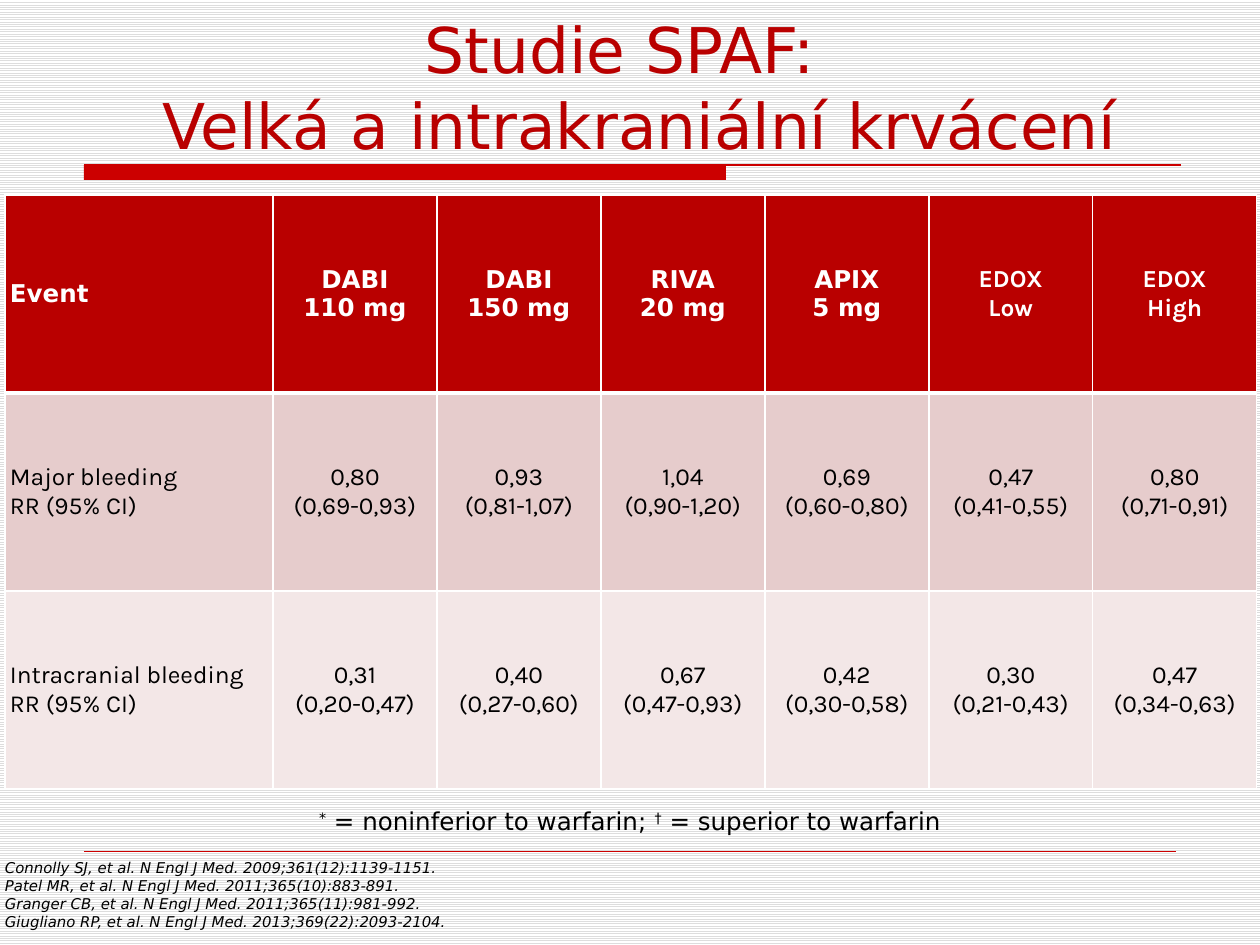
from lxml import etree
from pptx import Presentation
from pptx.dml.color import RGBColor
from pptx.enum.dml import MSO_PATTERN
from pptx.enum.shapes import MSO_CONNECTOR, MSO_SHAPE
from pptx.enum.text import MSO_ANCHOR, MSO_AUTO_SIZE, PP_ALIGN
from pptx.oxml.ns import qn
from pptx.util import Emu, Pt

LEFT, CENTER = PP_ALIGN.LEFT, PP_ALIGN.CENTER
TOP, MIDDLE, BOTTOM = MSO_ANCHOR.TOP, MSO_ANCHOR.MIDDLE, MSO_ANCHOR.BOTTOM
STRAIGHT = MSO_CONNECTOR.STRAIGHT

PX = 914400 // 126
RED, ACCENT, WHITE, BLACK = "B90000", "CC0000", "FFFFFF", "000000"
SANS, KARLA = "DejaVu Sans", "Karla"

TITLE = "Studie SPAF: \v Velká a intrakraniální krvácení"
ROWS = [
    ["Event", "DABI\n110 mg", "DABI\n150 mg", "RIVA\n20 mg", "APIX\n5 mg",
     "EDOX\nLow", "EDOX\nHigh"],
    ["Major bleeding\nRR (95% CI)", "0,80\n(0,69-0,93)", "0,93\n(0,81-1,07)",
     "1,04\n(0,90-1,20)", "0,69\n(0,60-0,80)", "0,47\n(0,41-0,55)",
     "0,80\n(0,71-0,91)"],
    ["Intracranial bleeding\nRR (95% CI)", "0,31\n(0,20-0,47)",
     "0,40\n(0,27-0,60)", "0,67\n(0,47-0,93)", "0,42\n(0,30-0,58)",
     "0,30\n(0,21-0,43)", "0,47\n(0,34-0,63)"],
]
ROW_FILLS = [RED, "E6CCCC", "F3E7E7"]
FIRST_KARLA_HEADING = 5
FOOTNOTE = [("*", True), (" = noninferior to warfarin; ", False),
            ("†", True), (" = superior to warfarin", False)]
CITATIONS = [
    "Connolly SJ, et al. N Engl J Med. 2009;361(12):1139-1151.",
    "Patel MR, et al. N Engl J Med. 2011;365(10):883-891.",
    "Granger CB, et al. N Engl J Med. 2011;365(11):981-992.",
    "Giugliano RP, et al. N Engl J Med. 2013;369(22):2093-2104.",
]


def px(*lengths):
    return [Emu(length * PX) for length in lengths]


def color(value):
    return RGBColor.from_string(value)


def style(font, text_color, **values):
    font.color.rgb = color(text_color)
    for name, value in values.items():
        setattr(font, name, value)


def set_margins(target, across, down):
    for side, size in dict(left=across, right=across, top=down, bottom=down).items():
        setattr(target, f"margin_{side}", Emu(size * PX))


def add_rule(page, left, right, y, width):
    rule = page.shapes.add_connector(STRAIGHT, *px(left, y, right, y))
    rule.line.color.rgb = color(ACCENT)
    rule.line.width = Pt(width)
    etree.SubElement(rule._element.spPr, qn("a:effectLst"))


def add_text_box(page, place, across, down):
    frame = page.shapes.add_textbox(*px(*place)).text_frame
    frame.word_wrap = True
    frame.vertical_anchor = TOP
    set_margins(frame, across, down)
    return frame


def set_borders(cell, widths):
    properties = cell._tc.get_or_add_tcPr()
    for position, (side, width) in enumerate(widths.items()):
        border = etree.Element(qn(f"a:ln{side}"), w=str(Pt(width)))
        fill = etree.SubElement(border, qn("a:solidFill"))
        etree.SubElement(fill, qn("a:srgbClr"), val=WHITE)
        properties.insert(position, border)


def add_results(page):
    label_width, value_width, row_height = 268, 164, 198
    count = len(ROWS[0])
    width = label_width + value_width * (count - 1)
    table = page.shapes.add_table(
        len(ROWS), count, *px(5, 195, width, row_height * len(ROWS))).table
    for index, column in enumerate(table.columns):
        column.width = Emu((value_width if index else label_width) * PX)
    for row_index, texts in enumerate(ROWS):
        table.rows[row_index].height = Emu(row_height * PX)
        heading = row_index == 0
        for index, text in enumerate(texts):
            cell = table.cell(row_index, index)
            cell.text = text
            cell.vertical_anchor = MIDDLE
            set_margins(cell, 5, 5)
            cell.fill.solid()
            cell.fill.fore_color.rgb = color(ROW_FILLS[row_index])
            set_borders(cell, dict(L=1, R=1, T=3 if row_index == 1 else 1,
                                   B=3 if heading else 1))
            sans = heading and index < FIRST_KARLA_HEADING
            for para in cell.text_frame.paragraphs:
                para.alignment = CENTER if index else LEFT
                for span in para.runs:
                    style(span.font, WHITE if heading else BLACK, size=Pt(14),
                          bold=heading, name=SANS if sans else KARLA)


def main():
    deck = Presentation()
    deck.slide_width, deck.slide_height = px(1260, 945)
    page = deck.slides.add_slide(deck.slide_layouts[5])
    backdrop = page.background.fill
    backdrop.patterned()
    backdrop.pattern = MSO_PATTERN.LIGHT_HORIZONTAL
    backdrop.fore_color.rgb = color("DDDDDD")
    backdrop.back_color.rgb = color(WHITE)

    bar = page.shapes.add_shape(MSO_SHAPE.RECTANGLE, *px(84, 165, 642, 15))
    bar.shadow.inherit = False
    bar.fill.solid()
    bar.fill.fore_color.rgb = color(ACCENT)
    bar.line.fill.background()
    add_rule(page, 84, 1181, 165, 0.75)
    add_rule(page, 84, 1176, 851, 0.25)

    title = page.shapes.title
    title.left, title.top, title.width, title.height = px(0, 55, 1260, 113)
    frame = title.text_frame
    frame.text = TITLE
    frame.auto_size = MSO_AUTO_SIZE.NONE
    frame.vertical_anchor = BOTTOM
    para = frame.paragraphs[0]
    para.alignment = CENTER
    for span in para.runs:
        style(span.font, RED, size=Pt(36), name=SANS)

    frame = add_text_box(page, (0, 859, 481, 69), 5, 0)
    frame.text = "\n".join(CITATIONS)
    for para in frame.paragraphs:
        for span in para.runs:
            style(span.font, BLACK, size=Pt(8.5), name=SANS, italic=True)

    add_results(page)

    para = add_text_box(page, (0, 800, 1260, 43), 13, 6).paragraphs[0]
    para.alignment = CENTER
    for text, raised in FOOTNOTE:
        span = para.add_run()
        span.text = text
        style(span.font, BLACK, size=Pt(14), name=SANS)
        if raised:
            span._r.get_or_add_rPr().set("baseline", "30000")

    deck.save("out.pptx")


if __name__ == "__main__":
    main()
